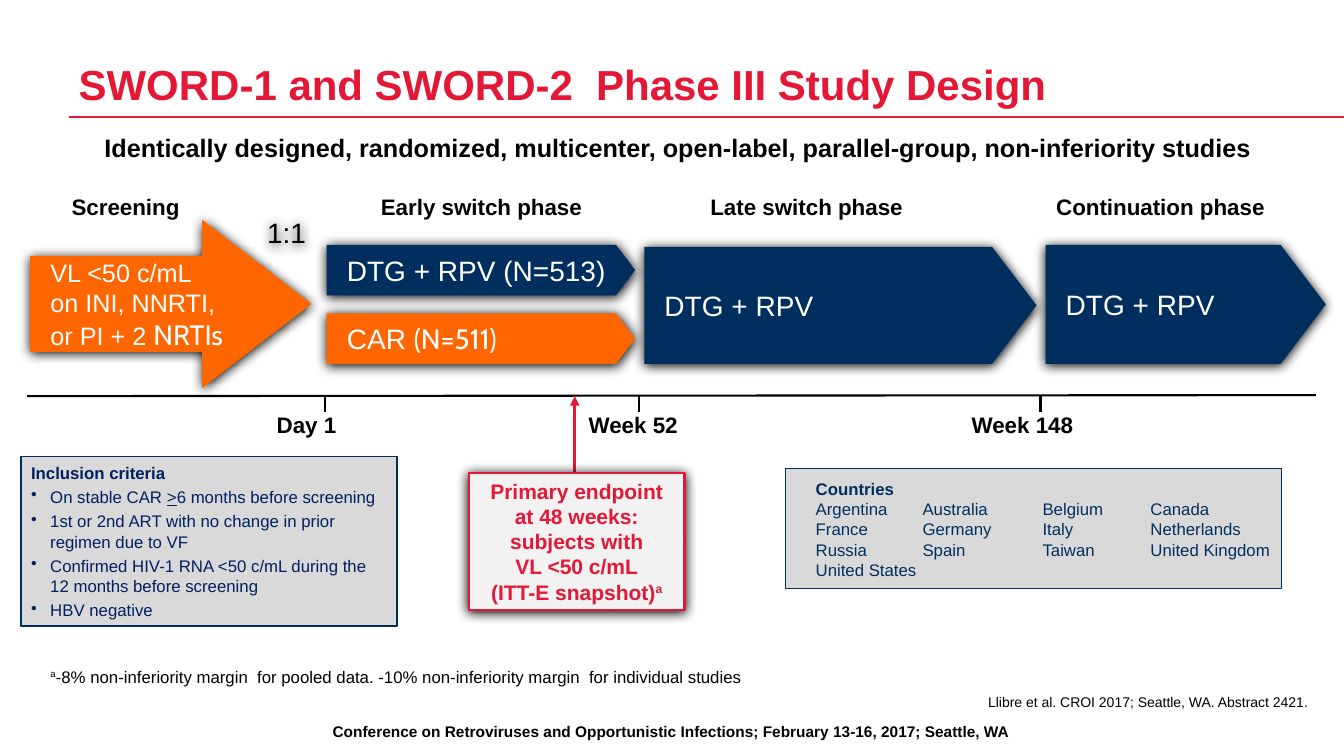
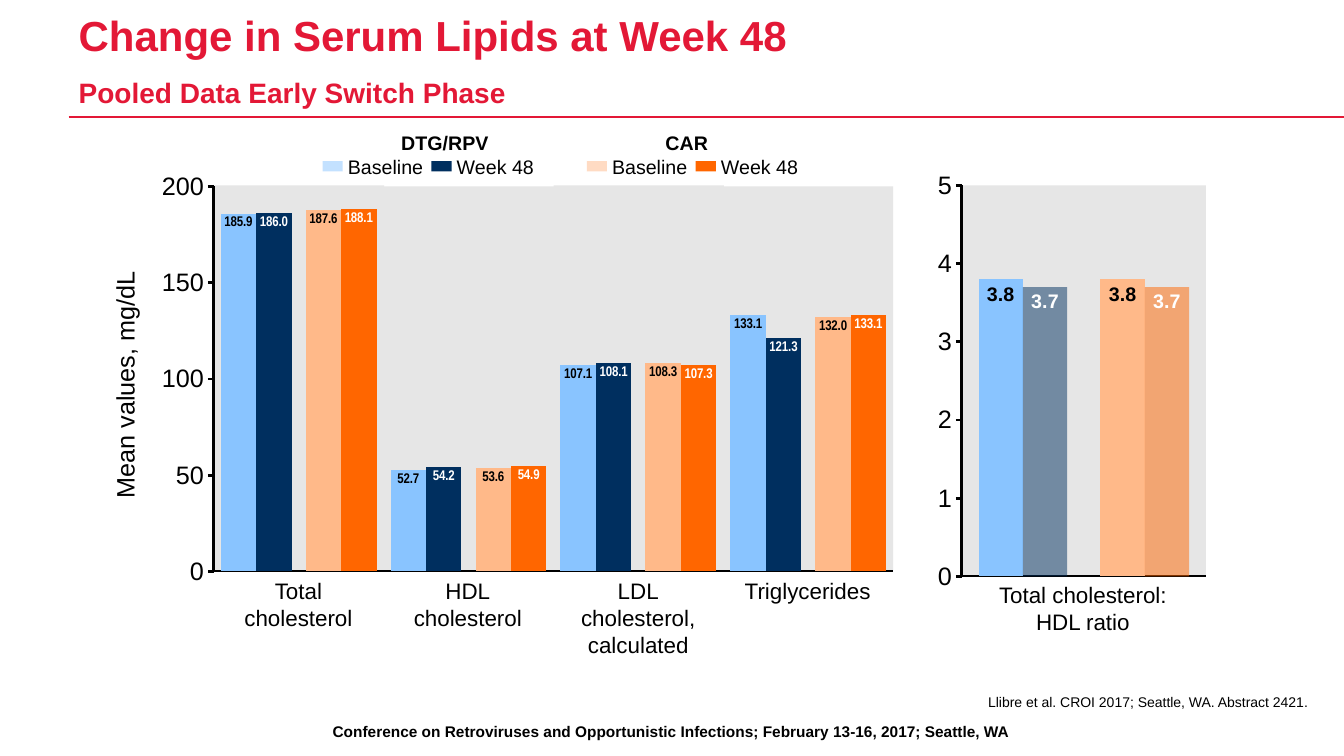
from lxml import etree
from pptx import Presentation
from pptx import util as u
from pptx.chart.data import CategoryChartData
from pptx.dml.color import RGBColor
from pptx.enum import chart as ch, shapes, text
from pptx.oxml.ns import qn

PX = 9144  # EMU in one px, 100 px to the inch
RED, NAVY, ORANGE = "E31836", "002F5F", "FF6600"
SKY, PEACH = "89C4FF", "FFB989"
BLACK, WHITE, PANEL, PALE, STRIPE = "000000", "FFFFFF", "D9D9D9", "F2F2F2", "E6E6E6"
LEFT, CENTER, RIGHT = text.PP_ALIGN.LEFT, text.PP_ALIGN.CENTER, text.PP_ALIGN.RIGHT
TOP, MIDDLE, BOTTOM = text.MSO_ANCHOR.TOP, text.MSO_ANCHOR.MIDDLE, text.MSO_ANCHOR.BOTTOM
RECT, ARROW, PLATE = (shapes.MSO_SHAPE.RECTANGLE, shapes.MSO_SHAPE.RIGHT_ARROW,
                      shapes.MSO_SHAPE.PENTAGON)
NO_INSET, INSET, BLOCK_INSET = (0, 0, 0, 0), (10, 5, 10, 5), (20, 5, 10, 5)

FOOTER = "Conference on Retroviruses and Opportunistic Infections; February 13-16, 2017; Seattle, WA"
CITATION = "Llibre et al. CROI 2017; Seattle, WA. Abstract 2421."

# Study design
DESIGN_TITLE = "SWORD-1 and SWORD-2  Phase III Study Design"
SUBTITLE = ("Identically designed, randomized, multicenter, open-label, parallel-group, "
            "non-inferiority studies")
PHASES = [("Screening", 60, 129), ("Early switch phase", 360, 235),
          ("Late switch phase", 693, 214), ("Continuation phase", 1036, 230)]
BLOCKS = [
    (ARROW, (0.57, 0.65), (30, 218, 279, 167), ORANGE, 18,
     ["VL <50 c/mL", "on INI, NNRTI,",
      [("or PI + 2 ", {}), ("NRTIs", {"name": "Cabin", "size": u.Pt(20)})]]),
    (PLATE, (0.38,), (324, 243, 306, 50), NAVY, 20, ["DTG + RPV (N=513)"]),
    (PLATE, (0.38,), (324, 311, 306, 50), ORANGE, 20,
     [[("CAR ", {}), ("(N=511)", {"name": "Cabin"})]]),
    (PLATE, (0.38,), (639, 245, 389, 116), NAVY, 20, ["DTG + RPV"]),
    (PLATE, (0.38,), (1037, 243, 278, 118), NAVY, 20, ["DTG + RPV"]),
]
VISITS = [("Day 1", 322, 264, 80), ("Week 52", 634, 573, 110), ("Week 148", 1032, 953, 122)]
INCLUSION = [
    [("Inclusion criteria", {"bold": True})],
    [("On stable CAR ", {}), (">", {"underline": True}), ("6 months before screening", {})],
    "1st or 2nd ART with no change in prior regimen due to VF",
    "Confirmed HIV-1 RNA <50 c/mL during the 12 months before screening",
    "HBV negative",
]
ENDPOINT = ["Primary endpoint", "at 48 weeks:", "subjects with", "VL <50 c/mL",
            [("(ITT-E snapshot)", {}), ("a", {"superscript": True})]]
COUNTRIES = [["Argentina", "Australia", "Belgium", "Canada"],
             ["France", "Germany", "Italy", "Netherlands"],
             ["Russia", "Spain", "Taiwan", "United Kingdom"],
             ["United States"]]
COUNTRY_TABS = (106, 225, 332)
FOOTNOTE = [[("a", {"superscript": True}),
             ("-8% non-inferiority margin  for pooled data. "
              "-10% non-inferiority margin  for individual studies", {})]]

# Serum lipids
LIPIDS_TITLE = ["Change in Serum Lipids at Week 48",
                [("Pooled Data Early Switch Phase", {"size": u.Pt(20)})]]
LIPIDS = ["Total\ncholesterol", "HDL\ncholesterol", "LDL\ncholesterol,\ncalculated",
          "Triglycerides"]
LIPID_CHART = dict(
    box=(48, 92, 852, 496), plot=(212, 185, 674, 382), gap=40, top=200, step=50,
    label={"size": u.Pt(10), "name": "Arial Narrow"},
    baseline=[185.9, 187.6, 52.7, 53.6, 107.1, 108.3, 133.1, 132.0],
    week48=[186.0, 188.1, 54.2, 54.9, 108.1, 107.3, 121.3, 133.1])
RATIO_CHART = dict(
    box=(872, 91, 372, 496), plot=(954, 184, 242, 388), gap=75, top=5, step=1,
    label={"size": u.Pt(14), "name": "Arial"}, alpha=50,
    baseline=[3.8, 3.8], week48=[3.7, 3.7])
LEGEND = [("DTG/RPV", 320, SKY, NAVY), ("CAR", 582, PEACH, ORANGE)]


def emu(values):
    return [u.Emu(v * PX) for v in values]


def rgb(color):
    return RGBColor.from_string(color)


def sub(parent, tag, **attrs):
    return etree.SubElement(parent, qn(tag), {k: str(v) for k, v in attrs.items()})


def paint(fmt, color):
    fmt.solid()
    fmt.fore_color.rgb = rgb(color)


def set_alpha(root, percent):
    for clr in list(root.iter(qn("a:srgbClr"))):
        sub(clr, "a:alpha", val=percent * 1000)


def set_font(font, values):
    for key, value in values.items():
        if key == "color":
            font.color.rgb = rgb(value)
        elif key == "superscript":
            font._element.set("baseline", "30000")
        else:
            setattr(font, key, value)


def write(tf, lines, size, color=BLACK, bold=False, align=LEFT, anchor=TOP,
          inset=INSET, wrap=True, before=0, spacing=None, tabs=(), bullet=0):
    """Fill a frame; a line is a string or a list of (text, font changes)."""
    base = {"name": "Arial", "size": u.Pt(size), "bold": bold, "color": color}
    sides = ("margin_left", "margin_top", "margin_right", "margin_bottom")
    frame = dict(zip(sides, emu(inset)), word_wrap=wrap, vertical_anchor=anchor)
    for key, value in frame.items():
        setattr(tf, key, value)
    for i, line in enumerate(lines):
        p = tf.paragraphs[0] if i == 0 else tf.add_paragraph()
        p.alignment = align
        if spacing:
            p.line_spacing = u.Pt(spacing)
        if i and before:
            p.space_before = u.Pt(before)
        ppr = p._p.get_or_add_pPr()
        if i and bullet:
            ppr.set("marL", str(bullet * PX))
            ppr.set("indent", str(-bullet * PX))
            sub(ppr, "a:buChar", char="•")
        if tabs:
            stops = sub(ppr, "a:tabLst")
            for pos in tabs:
                sub(stops, "a:tab", pos=pos * PX, algn="l")
        for words, changes in ([(line, {})] if isinstance(line, str) else line):
            r = p.add_run()
            r.text = words
            set_font(r.font, {**base, **changes})


def label(s, box, lines, size, **fmt):
    sp = s.shapes.add_textbox(*emu(box))
    write(sp.text_frame, lines, size, **fmt)
    sp.text_frame.auto_size = text.MSO_AUTO_SIZE.SHAPE_TO_FIT_TEXT
    return sp


def shape(s, kind, box, fill, line=None, width=1.0, adjust=()):
    sp = s.shapes.add_shape(kind, *emu(box))
    sp.shadow.inherit = False
    paint(sp.fill, fill)
    for i, value in enumerate(adjust):
        sp.adjustments[i] = value
    if line:
        sp.line.color.rgb = rgb(line)
        sp.line.width = u.Pt(width)
    else:
        sp.line.fill.background()
    return sp


def cast_shadow(sp):
    sp.shadow.inherit = False
    effects = sp._element.spPr.find(qn("a:effectLst"))
    shadow = sub(effects, "a:outerShdw", blurRad=u.Pt(8.5), dist=u.Pt(1),
                 dir=5400000, algn="ctr", rotWithShape=0)
    sub(shadow, "a:srgbClr", val=BLACK)


def line(s, start, end, color=BLACK, width=1.5, arrow=False):
    c = s.shapes.add_connector(shapes.MSO_CONNECTOR.STRAIGHT, *emu(start + end))
    c.line.color.rgb = rgb(color)
    c.line.width = u.Pt(width)
    if arrow:
        sub(c.line._get_or_add_ln(), "a:tailEnd", type="triangle")
    sub(c._element.spPr, "a:effectLst")


def base_slide(prs, title):
    """Add a slide with the shared title, rule, footer and citation."""
    s = prs.slides.add_slide(prs.slide_layouts[5])
    sp = s.shapes.title
    sp.left, sp.top, sp.width, sp.height = emu((78, 16, 1100, 92))
    write(sp.text_frame, title, 30, color=RED, bold=True, anchor=BOTTOM,
          inset=NO_INSET, spacing=35)
    sp.text_frame.auto_size = text.MSO_AUTO_SIZE.NONE
    line(s, (68, 116), (1333, 116), RED, 2)
    label(s, (9, 711, 1314, 29), [FOOTER], 11, bold=True, align=CENTER)
    label(s, (78, 688, 1219, 20), [CITATION], 10, align=RIGHT, inset=NO_INSET)
    return s


def design_slide(prs):
    s = base_slide(prs, [DESIGN_TITLE])
    label(s, (61, 126, 1223, 40), [SUBTITLE], 18, bold=True, align=CENTER)
    for name, left, width in PHASES:
        label(s, (left, 187, width, 37), [name], 16, bold=True, align=CENTER, wrap=False)
    for kind, adjust, box, fill, size, lines in BLOCKS:
        sp = shape(s, kind, box, fill, adjust=adjust)
        cast_shadow(sp)
        write(sp.text_frame, lines, size, color=WHITE, anchor=MIDDLE,
              inset=BLOCK_INSET, wrap=False)
    cast_shadow(label(s, (265, 210, 60, 40), ["1:1"], 20, anchor=MIDDLE, inset=NO_INSET))

    line(s, (27, 393), (1305, 392))
    for name, x, left, width in VISITS:
        line(s, (x, 393), (x, 409))
        label(s, (left, 403, width, 37), [name], 16, bold=True, align=CENTER, wrap=False)

    sp = shape(s, RECT, (21, 453, 373, 168), PANEL, NAVY)
    write(sp.text_frame, INCLUSION, 12, color="002060", anchor=MIDDLE, before=3, bullet=19)
    line(s, (570, 479), (570, 393), RED, 2.25, arrow=True)
    sp = shape(s, RECT, (465, 469, 214, 136), PALE, RED, 1.5)
    cast_shadow(sp)
    write(sp.text_frame, ENDPOINT, 15, color=RED, bold=True, align=CENTER,
          anchor=MIDDLE, inset=(0, 5, 0, 5))
    sp = shape(s, RECT, (779, 465, 492, 119), PANEL, NAVY)
    rows = [[("Countries", {"bold": True})]] + ["\t".join(row) for row in COUNTRIES]
    write(sp.text_frame, rows, 12, color=NAVY, inset=(30, 10, 10, 5), tabs=COUNTRY_TABS)
    label(s, (50, 661, 1219, 20), FOOTNOTE, 12, anchor=BOTTOM, inset=NO_INSET)


def place(parent, index, box, x, y, size=None):
    """Give a chart part a manual layout, from slide px."""
    old = parent.find(qn("c:layout"))
    if old is not None:
        parent.remove(old)
    layout = etree.Element(qn("c:layout"))
    parent.insert(index, layout)
    manual = sub(layout, "c:manualLayout")
    if size:
        sub(manual, "c:layoutTarget", val="inner")
    for tag in ("c:xMode", "c:yMode"):
        sub(manual, tag, val="edge")
    sub(manual, "c:x", val=(x - box[0]) / box[2])
    sub(manual, "c:y", val=(y - box[1]) / box[3])
    if size:
        sub(manual, "c:w", val=size[0] / box[2])
        sub(manual, "c:h", val=size[1] / box[3])


def column_chart(s, box, plot, gap, top, step, label, baseline, week48, alpha=None):
    data = CategoryChartData()
    data.categories = [str(i + 1) for i in range(len(baseline))]
    data.add_series("Baseline", baseline)
    data.add_series("Week 48", week48)
    chart = s.shapes.add_chart(ch.XL_CHART_TYPE.COLUMN_CLUSTERED, *emu(box), data).chart
    chart.has_legend = chart.has_title = False
    set_font(chart.font, {"name": "Arial", "size": u.Pt(18), "color": BLACK})
    columns = chart.plots[0]
    columns.gap_width, columns.overlap, columns.vary_by_categories = gap, 0, False
    styles = [((SKY, PEACH), BLACK), ((NAVY, ORANGE), WHITE)]
    for series, (colors, ink) in zip(columns.series, styles):
        series.invert_if_negative = False
        for i in range(len(baseline)):
            paint(series.points[i].format.fill, colors[i % 2])
        if alpha and ink == WHITE:
            set_alpha(series._element, alpha)
        dl = series.data_labels
        dl.show_value, dl.position = True, ch.XL_LABEL_POSITION.INSIDE_END
        dl.number_format, dl.number_format_is_linked = "#,##0.0", False
        set_font(dl.font, {**label, "bold": True, "color": ink})

    cat, val = chart.category_axis, chart.value_axis
    cat.tick_label_position = ch.XL_TICK_LABEL_POSITION.NONE
    val.minimum_scale, val.maximum_scale, val.major_unit = 0, top, step
    val.tick_labels.number_format, val.tick_labels.number_format_is_linked = "0", False
    for axis, width, tick in ((cat, 1.5, ch.XL_TICK_MARK.NONE),
                              (val, 2, ch.XL_TICK_MARK.OUTSIDE)):
        axis.has_major_gridlines = False
        axis.major_tick_mark, axis.minor_tick_mark = tick, ch.XL_TICK_MARK.NONE
        axis.format.line.color.rgb = rgb(BLACK)
        axis.format.line.width = u.Pt(width)
    area = chart._chartSpace.find(".//" + qn("c:plotArea"))
    place(area, 0, box, plot[0], plot[1], plot[2:])
    fill = sub(sub(area, "c:spPr"), "a:solidFill")
    sub(fill, "a:srgbClr", val=STRIPE)
    return chart


def lipids_slide(prs):
    s = base_slide(prs, LIPIDS_TITLE)
    left, _, width, _ = LIPID_CHART["plot"]
    columns = [left + width * i // len(LIPIDS) for i in range(len(LIPIDS))]
    for x in columns[::2]:
        shape(s, RECT, (x, 184, 169, 382), STRIPE)
    title = column_chart(s, **LIPID_CHART).value_axis.axis_title
    tf = title.text_frame
    r = tf.paragraphs[0].add_run()
    r.text = "Mean values, mg/dL"
    set_font(r.font, {"name": "Arial", "size": u.Pt(18), "bold": False, "color": BLACK})
    tf._txBody.bodyPr.set("rot", "-5400000")
    tf._txBody.bodyPr.set("vert", "horz")
    place(title._element, 1, LIPID_CHART["box"], 103, 265)
    column_chart(s, **RATIO_CHART)

    for x, name in zip(columns, LIPIDS):
        lines = name.split("\n")
        label(s, (x, 573, 168, 27 * len(lines)), lines, 16, align=CENTER, inset=NO_INSET)
    label(s, (990, 577, 168, 54), ["Total cholesterol:", "HDL ratio"], 16,
          align=CENTER, inset=NO_INSET, wrap=False)
    for arm, x, light, dark in LEGEND:
        label(s, (x + 78, 130, 90, 24), [arm], 14, bold=True, inset=NO_INSET)
        for dx, name, color in ((0, "Baseline", light), (108, "Week 48", dark)):
            sp = shape(s, RECT, (x + dx, 160, 20, 10), color)
            if color == light:
                set_alpha(sp._element.spPr, 50)
            label(s, (x + dx + 25, 154, 78, 24), [name], 14, inset=NO_INSET)


def main():
    prs = Presentation()
    prs.slide_width, prs.slide_height = emu((1333, 750))
    design_slide(prs)
    lipids_slide(prs)
    prs.save("out.pptx")


if __name__ == "__main__":
    main()
